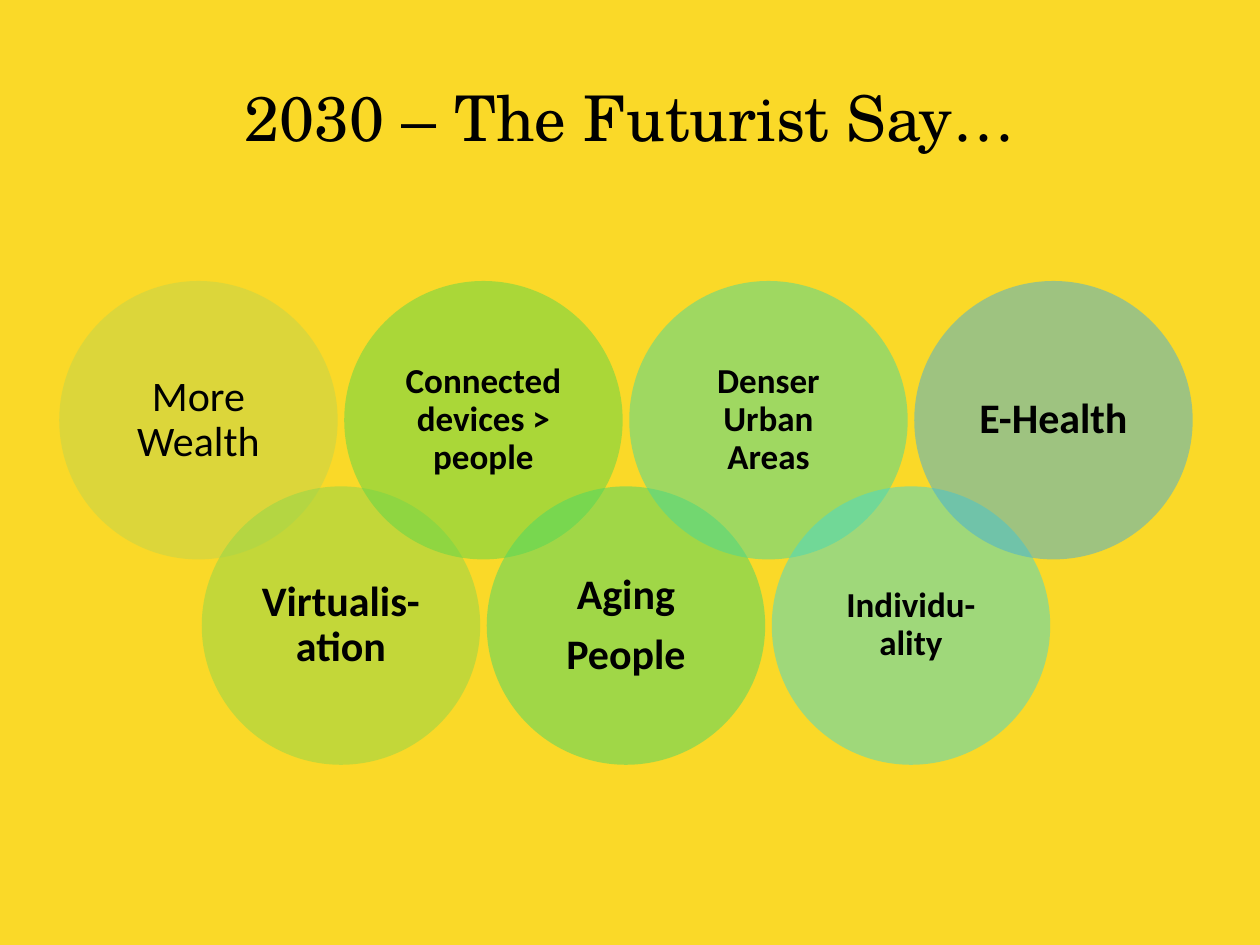
import dataclasses

import pptx
import pptx.dml.color
import pptx.enum.shapes
import pptx.enum.text
import pptx.oxml.ns
import pptx.slide
import pptx.util
from lxml import etree

Inches = pptx.util.Inches
Pt = pptx.util.Pt

DIAMETER = 2.21
FIRST_LEFT = 0.47
COLUMN_STEP = 1.131
ROW_TOPS = (2.23, 3.86)


@dataclasses.dataclass(frozen=True)
class Trend:
    text: str
    fill: str
    size: int = 24
    bold: bool = True


TRENDS = [
    Trend("More Wealth", "BFD54C", bold=False),
    Trend("Virtualis-ation", "8ED64B"),
    Trend("Connected devices > people", "5CD649", size=20),
    Trend("Aging\nPeople", "48D767"),
    Trend("Denser Urban Areas", "46D89A", size=20),
    Trend("Individu-ality", "45D8CD", size=20),
    Trend("E-Health", "43AFD9"),
]


def set_color(target, color: str) -> None:
    if hasattr(target, "solid"):
        target.solid()
        target = target.fore_color
    target.rgb = pptx.dml.color.RGBColor.from_string(color)


def format_font(font, name: str, size: int, bold: bool = False) -> None:
    font.name = name
    font.size = Pt(size)
    font.bold = bold
    set_color(font.color, "000000")


def set_opacity(shape, percent: int) -> None:
    color = shape.fill._xPr.find(".//" + pptx.oxml.ns.qn("a:srgbClr"))
    alpha = etree.SubElement(color, pptx.oxml.ns.qn("a:alpha"))
    alpha.set("val", str(percent * 1000))


def add_title(slide: pptx.slide.Slide, text: str) -> None:
    title = slide.shapes.title
    title.left, title.top = Inches(0.5), Inches(0.3)
    title.width, title.height = Inches(9), Inches(1.25)
    title.text_frame.text = text
    title.text_frame.vertical_anchor = pptx.enum.text.MSO_ANCHOR.MIDDLE
    paragraph = title.text_frame.paragraphs[0]
    paragraph.alignment = pptx.enum.text.PP_ALIGN.CENTER
    format_font(paragraph.runs[0].font, "TeX Gyre Schola", 36)


def add_trend(slide: pptx.slide.Slide, trend: Trend, index: int) -> None:
    shape = slide.shapes.add_shape(
        pptx.enum.shapes.MSO_SHAPE.OVAL,
        Inches(FIRST_LEFT + index * COLUMN_STEP),
        Inches(ROW_TOPS[index % 2]),
        Inches(DIAMETER),
        Inches(DIAMETER),
    )
    shape.shadow.inherit = False
    shape.line.fill.background()
    set_color(shape.fill, trend.fill)
    set_opacity(shape, 50)

    text_frame = shape.text_frame
    text_frame.word_wrap = True
    text_frame.vertical_anchor = pptx.enum.text.MSO_ANCHOR.MIDDLE
    inset = Inches(0.1 if trend.size == 24 else 0.08)
    text_frame.margin_left = text_frame.margin_right = inset
    text_frame.margin_top = text_frame.margin_bottom = inset
    text_frame.text = trend.text
    for paragraph in text_frame.paragraphs:
        paragraph.alignment = pptx.enum.text.PP_ALIGN.CENTER
        paragraph.line_spacing = 0.9
        paragraph.space_after = Pt(0.35 * trend.size)
        format_font(paragraph.runs[0].font, "Calibri", trend.size, trend.bold)


def main() -> None:
    presentation = pptx.Presentation()
    presentation.slide_width = Inches(10)
    presentation.slide_height = Inches(7.5)
    slide = presentation.slides.add_slide(presentation.slide_layouts[5])
    set_color(slide.background.fill, "FAD928")
    add_title(slide, "2030 – The Futurist Say…")
    for index, trend in enumerate(TRENDS):
        add_trend(slide, trend, index)
    presentation.save("out.pptx")


if __name__ == "__main__":
    main()
